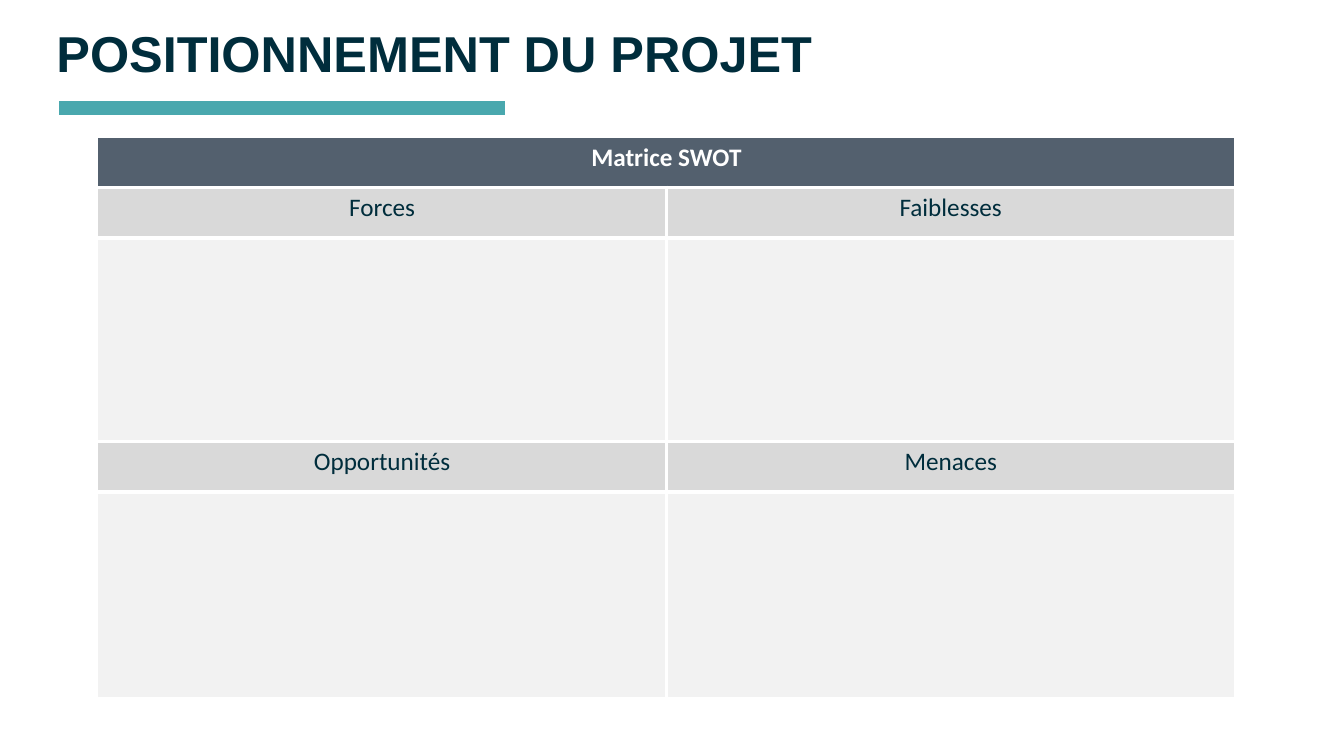
"""Build the SWOT matrix slide."""
import lxml.etree
import pptx
import pptx.dml.color
import pptx.enum.shapes
import pptx.enum.text
import pptx.oxml.ns
import pptx.util

PX = 9144
NAVY = pptx.dml.color.RGBColor(0x00, 0x2D, 0x3C)
TEAL = pptx.dml.color.RGBColor(0x49, 0xA8, 0xAE)
SLATE = pptx.dml.color.RGBColor(0x53, 0x60, 0x6E)
GREY = pptx.dml.color.RGBColor(0xD9, 0xD9, 0xD9)
PALE = pptx.dml.color.RGBColor(0xF2, 0xF2, 0xF2)
WHITE = pptx.dml.color.RGBColor(0xFF, 0xFF, 0xFF)

MATRIX = [
    (50, SLATE, ["Matrice SWOT", ""]),
    (50, GREY, ["Forces", "Faiblesses"]),
    (202, PALE, ["", ""]),
    (50, GREY, ["Opportunités", "Menaces"]),
    (204, PALE, ["", ""]),
]
COLUMN_WIDTH = 564


def px(*lengths):
    """Turn px lengths into EMU."""
    return [pptx.util.Emu(n * PX) for n in lengths]


def sub(parent, tag, **attributes):
    """Append a DrawingML child element."""
    return lxml.etree.SubElement(parent, pptx.oxml.ns.qn(tag), **attributes)


def style(p, font, size, color, bold):
    """Format the runs of a paragraph."""
    for r in p.runs:
        r.font.name = font
        r.font.size = pptx.util.Pt(size)
        r.font.color.rgb = color
        r.font.bold = bold


def set_title(s, text):
    """Place and format the slide title."""
    sp = s.shapes.title
    sp.left, sp.top, sp.width, sp.height = px(46, 24, 866, 54)
    tf = sp.text_frame
    tf.text = text
    tf.word_wrap = True
    tf.auto_size = pptx.enum.text.MSO_AUTO_SIZE.NONE
    tf.vertical_anchor = pptx.enum.text.MSO_ANCHOR.TOP
    p = tf.paragraphs[0]
    p.alignment = pptx.enum.text.PP_ALIGN.LEFT
    p.line_spacing = 0.9
    style(p, "Arial", 36, NAVY, True)


def add_rule(s, x1, x2, y):
    """Draw the thick rule under the title."""
    line = s.shapes.add_connector(
        pptx.enum.shapes.MSO_CONNECTOR.STRAIGHT, *px(x1, y, x2, y))
    line.line.color.rgb = TEAL
    line.line.width = pptx.util.Pt(10)
    sub(line._element.spPr, "a:effectLst")


def set_borders(cell, widths):
    """Give a cell white borders: left, right, top, bottom, in points."""
    tcPr = cell._tc.get_or_add_tcPr()
    for side, width in zip("LRTB", widths):
        ln = sub(tcPr, f"a:ln{side}", w=str(pptx.util.Pt(width)))
        sub(sub(ln, "a:solidFill"), "a:srgbClr", val=str(WHITE))


def fill_cell(cell, text, fill, header):
    """Write and colour one cell."""
    cell.fill.solid()
    cell.fill.fore_color.rgb = fill
    cell.text = text
    p = cell.text_frame.paragraphs[0]
    p.alignment = pptx.enum.text.PP_ALIGN.CENTER
    style(p, "Calibri", 18, WHITE if header else NAVY, header)


def add_matrix(s, left, top):
    """Add the SWOT table, with thin outer and thick inner borders."""
    height = sum(row[0] for row in MATRIX)
    table = s.shapes.add_table(
        len(MATRIX), 2, *px(left, top, 2 * COLUMN_WIDTH, height)).table
    table.horz_banding = False
    for column in table.columns:
        column.width = px(COLUMN_WIDTH)[0]
    last = len(MATRIX) - 1
    for i, (height, fill, texts) in enumerate(MATRIX):
        table.rows[i].height = px(height)[0]
        for j, text in enumerate(texts):
            cell = table.cell(i, j)
            outer = (j == 0, j == 1 or i == 0, i == 0, i == last)
            set_borders(cell, [1 if edge else 3 for edge in outer])
            fill_cell(cell, text, fill, i == 0)
    table.cell(0, 0).merge(table.cell(0, 1))


def main():
    """Build and save the slide."""
    prs = pptx.Presentation()
    prs.slide_width, prs.slide_height = px(1333, 750)
    s = prs.slides.add_slide(prs.slide_layouts[5])
    set_title(s, "POSITIONNEMENT DU PROJET")
    add_rule(s, 59, 501, 107)
    add_matrix(s, 97, 136)
    prs.save("out.pptx")


if __name__ == "__main__":
    main()
